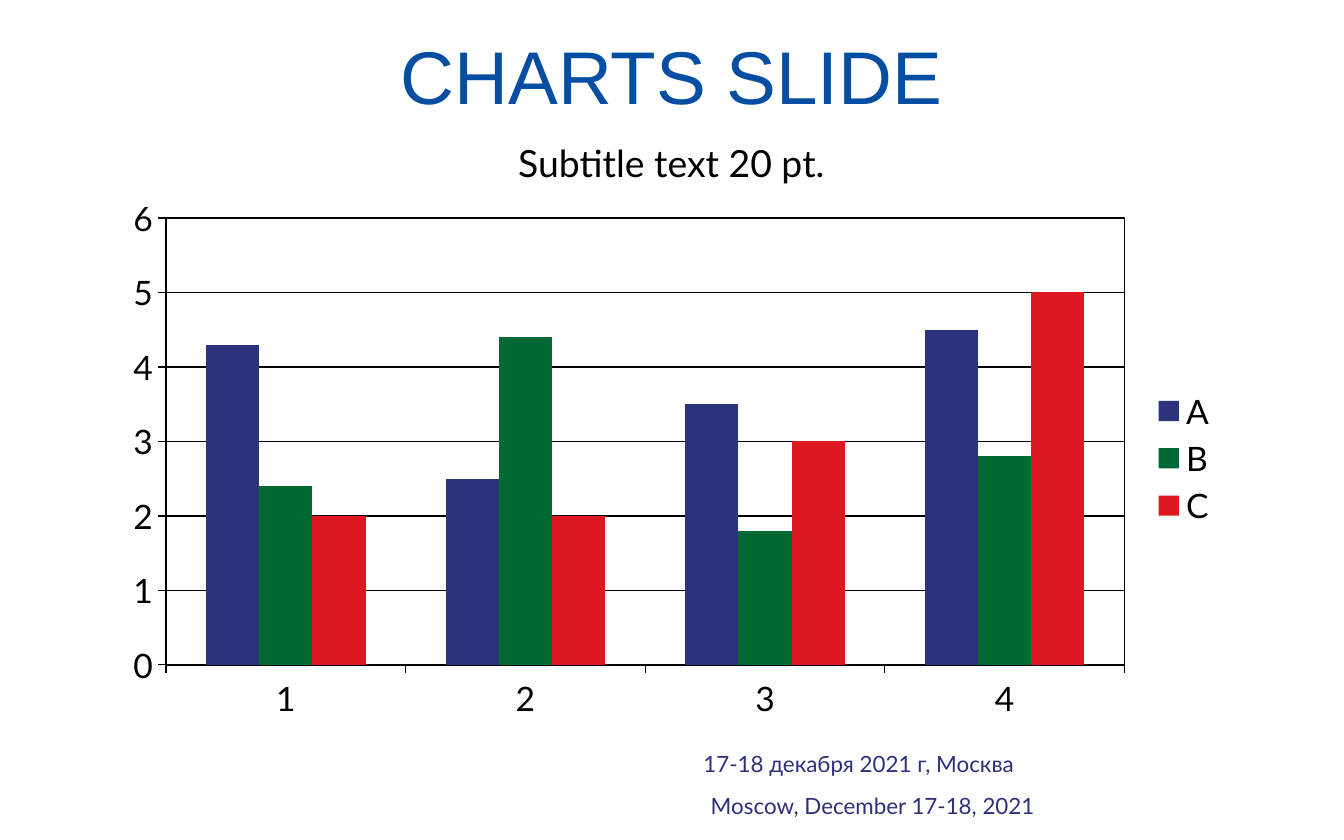
from dataclasses import dataclass

from lxml import etree
from pptx import Presentation
from pptx.chart.data import CategoryChartData
from pptx.dml.color import RGBColor
from pptx.enum import chart as charts, text
from pptx.oxml import ns
from pptx.util import Pt


@dataclass(frozen=True)
class Theme:
    heading_font: str = "Arial"
    body_font: str = "Lato"
    title_size: float = 40
    subtitle_size: float = 20
    chart_size: float = 18
    footer_size: float = 12
    line_width: float = 0.75
    title: str = "034EA2"
    ink: str = "000000"
    footer: str = "2E307C"


@dataclass(frozen=True)
class Box:
    left: float
    top: float
    width: float
    height: float

    def points(self) -> tuple:
        return Pt(self.left), Pt(self.top), Pt(self.width), Pt(self.height)


@dataclass(frozen=True)
class Caption:
    box: Box
    lines: tuple
    font: str
    size: float
    color: str
    gap: float = 0


@dataclass(frozen=True)
class Series:
    name: str
    values: tuple
    color: str


THEME = Theme()

TITLE = Caption(Box(19.5, 13.7, 680.4, 58.3), ("CHARTS SLIDE",),
                THEME.heading_font, THEME.title_size, THEME.title)
SUBTITLE = Caption(Box(19.5, 72, 680.4, 33.8), ("Subtitle text 20 pt.",),
                   THEME.body_font, THEME.subtitle_size, THEME.ink)
FOOTER = Caption(Box(325.4, 399.6, 269.4, 43.2),
                 ("17-18 декабря 2021 г, Москва", "Moscow, December 17-18, 2021"),
                 THEME.body_font, THEME.footer_size, THEME.footer, gap=10)
FOOTER_INDENT = 15

CHART_BOX = Box(59.8, 100.1, 599.8, 290.9)
# Inner plot area as shares of the chart
PLOT_SHARES = {"x": 0.0486, "y": 0.0575, "w": 0.856, "h": 0.823}
CATEGORIES = ("1", "2", "3", "4")
SERIES = (
    Series("A", (4.3, 2.5, 3.5, 4.5), "2C327B"),
    Series("B", (2.4, 4.4, 1.8, 2.8), "006934"),
    Series("C", (2, 2, 3, 5), "DD1820"),
)


def style_font(font, name: str, size: float, color: str) -> None:
    font.name = name
    font.size = Pt(size)
    font.color.rgb = RGBColor.from_string(color)


def style_line(line) -> None:
    line.color.rgb = RGBColor.from_string(THEME.ink)
    line.width = Pt(THEME.line_width)


def add_caption(slide, caption: Caption):
    frame = slide.shapes.add_textbox(*caption.box.points()).text_frame
    frame.word_wrap = True
    frame.vertical_anchor = text.MSO_ANCHOR.MIDDLE
    frame.text = "\n".join(caption.lines)
    for index, paragraph in enumerate(frame.paragraphs):
        paragraph.alignment = text.PP_ALIGN.CENTER
        paragraph.line_spacing = 0.9
        if index:
            paragraph.space_before = Pt(caption.gap)
        for run in paragraph.runs:
            style_font(run.font, caption.font, caption.size, caption.color)
    return frame


def frame_plot(chart) -> None:
    """Fix the inner plot area and give it a border."""
    plot_area = chart.plots[0]._element.getparent()
    for old in plot_area.findall(ns.qn("c:layout")):
        plot_area.remove(old)
    layout = etree.Element(ns.qn("c:layout"))
    manual = etree.SubElement(layout, ns.qn("c:manualLayout"))
    settings = {"layoutTarget": "inner", "xMode": "edge", "yMode": "edge", **PLOT_SHARES}
    for tag, value in settings.items():
        etree.SubElement(manual, ns.qn(f"c:{tag}")).set("val", str(value))
    plot_area.insert(0, layout)

    properties = etree.SubElement(plot_area, ns.qn("c:spPr"))
    etree.SubElement(properties, ns.qn("a:noFill"))
    border = etree.SubElement(properties, ns.qn("a:ln"), w=str(int(Pt(THEME.line_width))))
    fill = etree.SubElement(border, ns.qn("a:solidFill"))
    etree.SubElement(fill, ns.qn("a:srgbClr"), val=THEME.ink)


def add_columns(slide) -> None:
    data = CategoryChartData()
    data.categories = CATEGORIES
    for series in SERIES:
        data.add_series(series.name, series.values)
    chart = slide.shapes.add_chart(
        charts.XL_CHART_TYPE.COLUMN_CLUSTERED, *CHART_BOX.points(), data).chart
    chart.has_title = False
    style_font(chart.font, THEME.body_font, THEME.chart_size, THEME.ink)

    # Columns
    columns = chart.plots[0]
    columns.gap_width = 150
    columns.overlap = 0
    columns.vary_by_categories = False
    for drawn, series in zip(columns.series, SERIES):
        drawn.format.fill.solid()
        drawn.format.fill.fore_color.rgb = RGBColor.from_string(series.color)

    # Axes and gridlines
    for axis in (chart.category_axis, chart.value_axis):
        axis.major_tick_mark = charts.XL_TICK_MARK.OUTSIDE
        axis.minor_tick_mark = charts.XL_TICK_MARK.NONE
        style_line(axis.format.line)
    scale = chart.value_axis
    scale.minimum_scale, scale.maximum_scale, scale.major_unit = 0, 6, 1
    scale.has_major_gridlines = True
    style_line(scale.major_gridlines.format.line)
    frame_plot(chart)

    # Legend
    chart.has_legend = True
    chart.legend.position = charts.XL_LEGEND_POSITION.RIGHT
    chart.legend.include_in_layout = False
    style_font(chart.legend.font, THEME.body_font, THEME.chart_size, THEME.ink)


def main() -> None:
    deck = Presentation()
    deck.slide_width, deck.slide_height = Pt(720), Pt(450)
    slide = deck.slides.add_slide(deck.slide_layouts[6])

    # Date and place, the second line set slightly to the right
    footer = add_caption(slide, FOOTER)
    footer.paragraphs[1]._p.get_or_add_pPr().set("marL", str(int(Pt(FOOTER_INDENT))))

    # Headings
    add_caption(slide, TITLE)
    add_caption(slide, SUBTITLE)

    # Chart
    add_columns(slide)
    deck.save("out.pptx")


if __name__ == "__main__":
    main()
